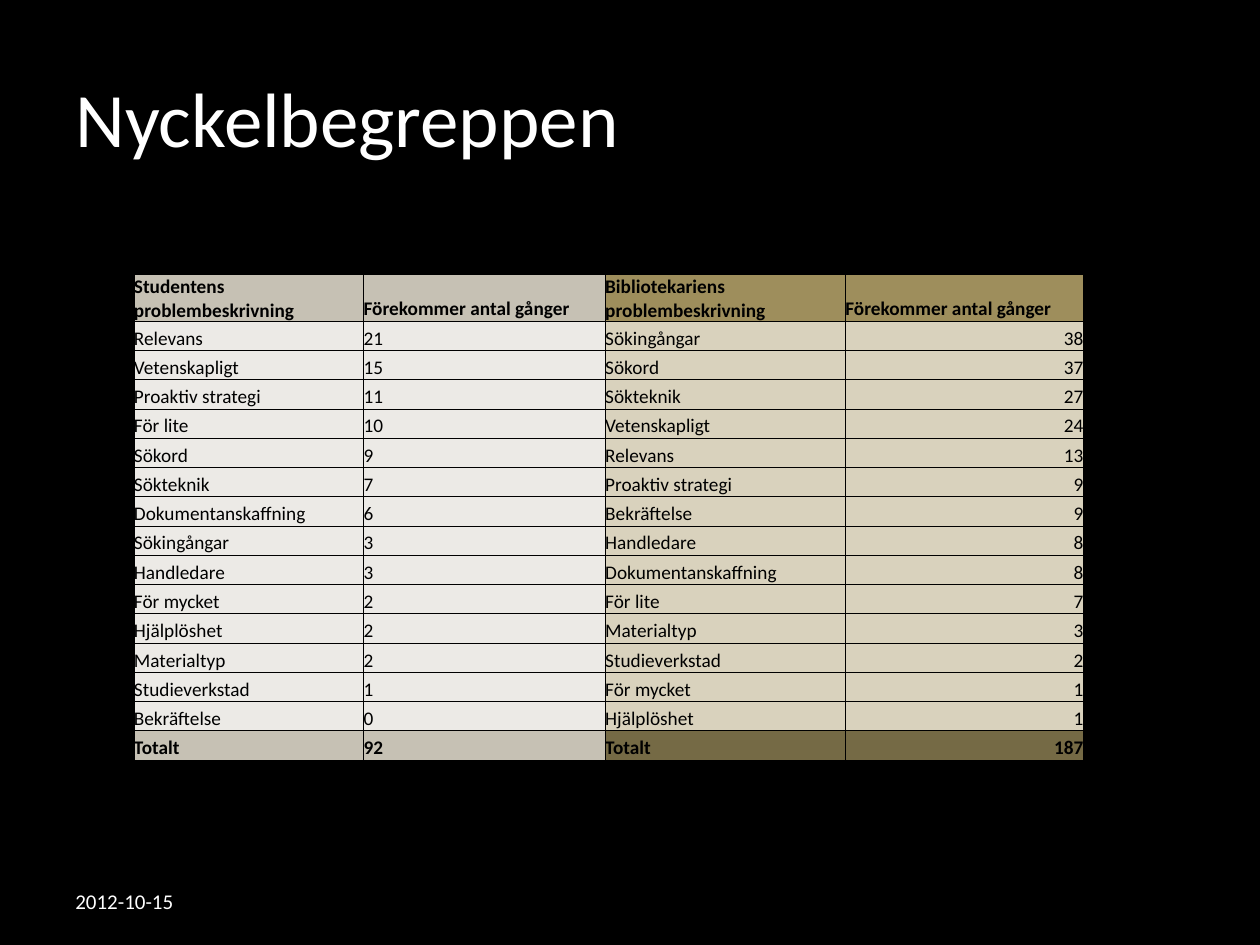
"""Builds the slide with the key concept counts of students and librarians."""
import lxml.etree
import pptx
import pptx.dml.color
import pptx.enum.text
import pptx.oxml.ns
import pptx.util

Cm = pptx.util.Cm
RGBColor = pptx.dml.color.RGBColor
ALIGN = pptx.enum.text.PP_ALIGN
ANCHOR = pptx.enum.text.MSO_ANCHOR

BLACK = RGBColor(0x00, 0x00, 0x00)
WHITE = RGBColor(0xFF, 0xFF, 0xFF)
GREY = RGBColor(0xC6, 0xC1, 0xB4)
PALE_GREY = RGBColor(0xEC, 0xEA, 0xE6)
OLIVE = RGBColor(0x9E, 0x8E, 0x5C)
PALE_OLIVE = RGBColor(0xD9, 0xD2, 0xBD)
DARK_OLIVE = RGBColor(0x75, 0x6A, 0x45)

HEADER_FILLS = (GREY, GREY, OLIVE, OLIVE)
BODY_FILLS = (PALE_GREY, PALE_GREY, PALE_OLIVE, PALE_OLIVE)
TOTAL_FILLS = (GREY, GREY, DARK_OLIVE, DARK_OLIVE)

COLUMN_WIDTHS = (4.63, 4.87, 4.84, 4.8)
ROW_HEIGHT = 0.59
TABLE_HEIGHT = 9.78

CONCEPTS = [
    ("Studentens problembeskrivning", "Förekommer antal gånger",
     "Bibliotekariens problembeskrivning", "Förekommer antal gånger"),
    ("Relevans", 21, "Sökingångar", 38),
    ("Vetenskapligt", 15, "Sökord", 37),
    ("Proaktiv strategi", 11, "Sökteknik", 27),
    ("För lite", 10, "Vetenskapligt", 24),
    ("Sökord", 9, "Relevans", 13),
    ("Sökteknik", 7, "Proaktiv strategi", 9),
    ("Dokumentanskaffning", 6, "Bekräftelse", 9),
    ("Sökingångar", 3, "Handledare", 8),
    ("Handledare", 3, "Dokumentanskaffning", 8),
    ("För mycket", 2, "För lite", 7),
    ("Hjälplöshet", 2, "Materialtyp", 3),
    ("Materialtyp", 2, "Studieverkstad", 2),
    ("Studieverkstad", 1, "För mycket", 1),
    ("Bekräftelse", 0, "Hjälplöshet", 1),
    ("Totalt", 92, "Totalt", 187),
]


class SlideBuilder:
    font = "Calibri"
    border_width = pptx.util.Pt(0.5)

    def __init__(self, deck, background):
        self.page = deck.slides.add_slide(deck.slide_layouts[6])
        fill = self.page.background.fill
        fill.solid()
        fill.fore_color.rgb = background

    def add_span(self, para, text, size, color, bold=False):
        span = para.add_run()
        span.text = text
        span.font.name = self.font
        span.font.size = pptx.util.Pt(size)
        span.font.color.rgb = color
        span.font.bold = bold

    def add_text(self, text, left, top, width, height, size):
        box = self.page.shapes.add_textbox(Cm(left), Cm(top), Cm(width), Cm(height))
        box.text_frame.word_wrap = True
        box.text_frame.vertical_anchor = ANCHOR.MIDDLE
        self.add_span(box.text_frame.paragraphs[0], text, size, WHITE)

    def add_borders(self, cell):
        properties = cell._tc.get_or_add_tcPr()
        qn = pptx.oxml.ns.qn
        for position, side in enumerate(("a:lnL", "a:lnR", "a:lnT", "a:lnB")):
            line = lxml.etree.Element(qn(side), w=str(self.border_width))
            solid = lxml.etree.SubElement(line, qn("a:solidFill"))
            lxml.etree.SubElement(solid, qn("a:srgbClr"), val=str(BLACK))
            properties.insert(position, line)

    def fill_cell(self, cell, text, fill, bold, align):
        cell.margin_left = cell.margin_right = cell.margin_top = cell.margin_bottom = 0
        cell.vertical_anchor = ANCHOR.BOTTOM
        cell.fill.solid()
        cell.fill.fore_color.rgb = fill
        self.add_borders(cell)
        para = cell.text_frame.paragraphs[0]
        para.alignment = align
        self.add_span(para, text, 11, BLACK, bold)

    def add_table(self, rows, left, top):
        frame = self.page.shapes.add_table(
            len(rows), len(COLUMN_WIDTHS), Cm(left), Cm(top),
            Cm(sum(COLUMN_WIDTHS)), Cm(TABLE_HEIGHT))
        table = frame.table
        table.first_row = table.horz_banding = False
        for column, width in zip(table.columns, COLUMN_WIDTHS):
            column.width = Cm(width)
        row_fills = {0: HEADER_FILLS, len(rows) - 1: TOTAL_FILLS}
        for r, values in enumerate(rows):
            table.rows[r].height = Cm(ROW_HEIGHT)
            fills = row_fills.get(r, BODY_FILLS)
            for c, value in enumerate(values):
                align = ALIGN.RIGHT if c == 3 and r > 0 else ALIGN.LEFT
                self.fill_cell(table.cell(r, c), str(value), fills[c], r in row_fills, align)
        frame.height = Cm(TABLE_HEIGHT)


def main():
    deck = pptx.Presentation()
    deck.slide_width, deck.slide_height = Cm(25.4), Cm(19.05)
    builder = SlideBuilder(deck, BLACK)
    builder.add_text("Nyckelbegreppen", 1.27, 0.76, 22.86, 3.18, 44)
    builder.add_table(CONCEPTS, 2.7, 5.54)
    builder.add_text("2012-10-15", 1.27, 17.65, 5.92, 1.02, 12)
    deck.save("out.pptx")


if __name__ == "__main__":
    main()
